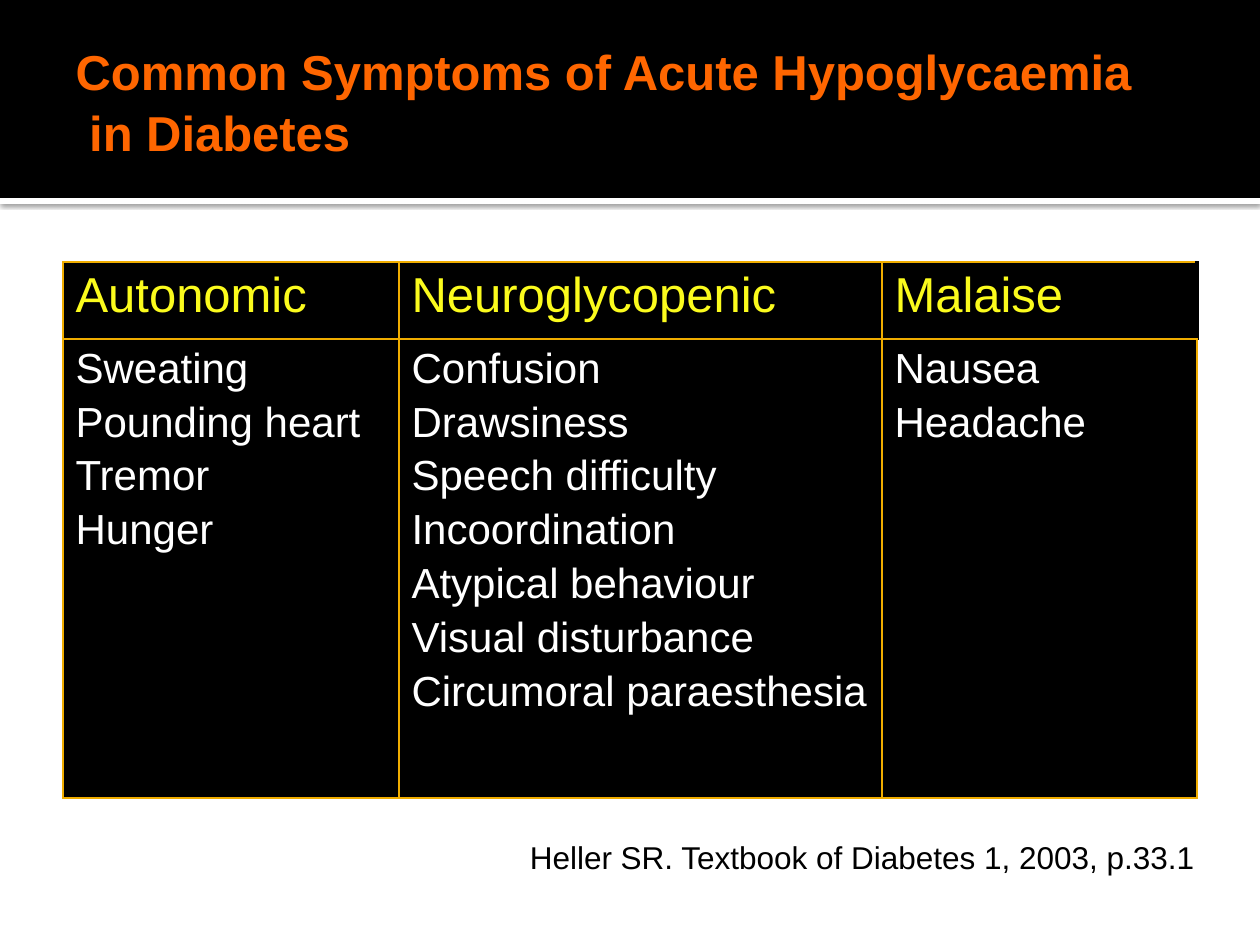
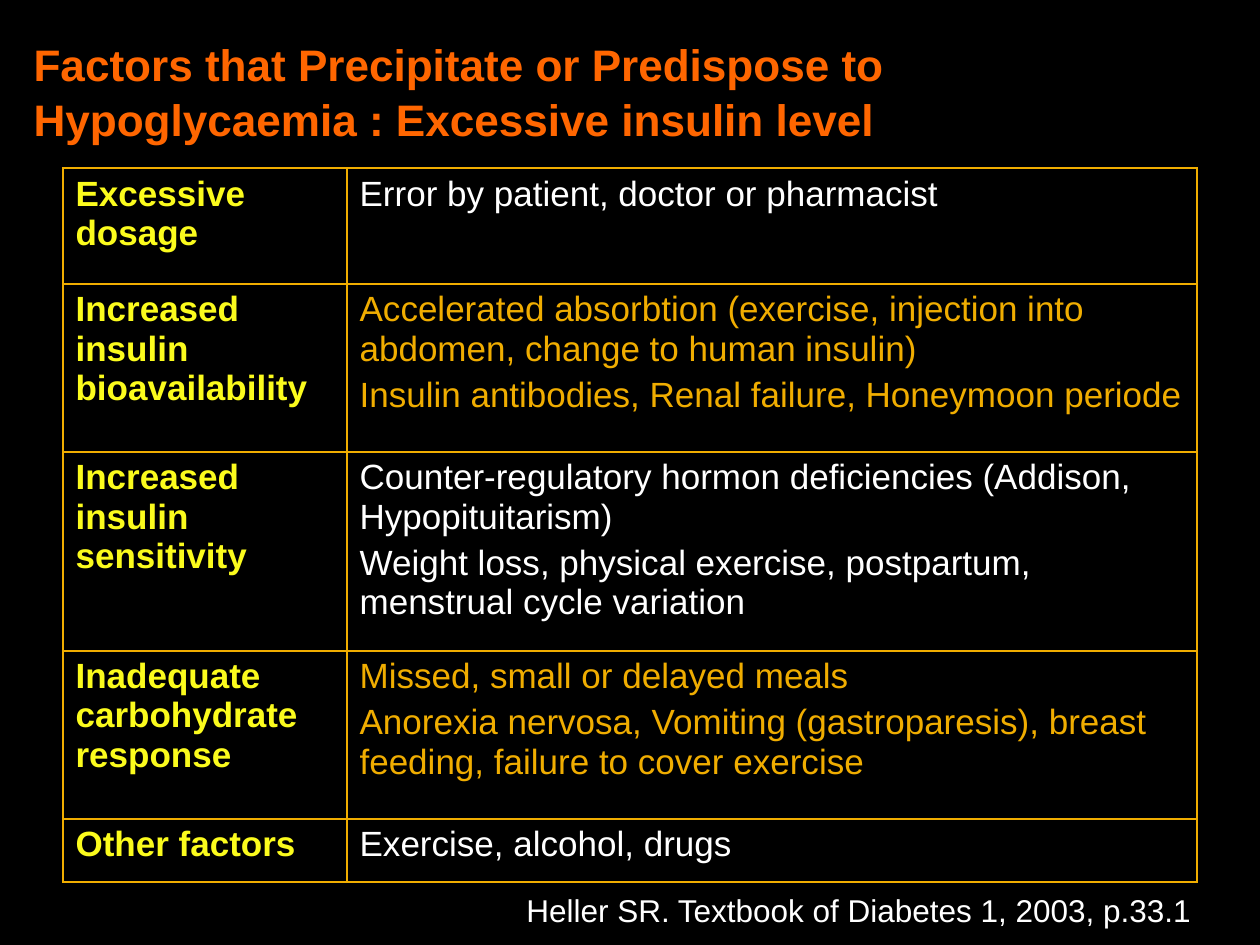
"""Build two slides on the signs and causes of hypoglycaemia."""
from dataclasses import dataclass

from lxml.etree import SubElement as Sub
from pptx import Presentation
from pptx.dml.color import RGBColor as Color
from pptx.enum.shapes import MSO_SHAPE as Kind
from pptx.enum.text import MSO_ANCHOR as Anchor, MSO_AUTO_SIZE as Fit, PP_ALIGN as Align
from pptx.oxml.ns import qn
from pptx.slide import Slide
from pptx.table import _Cell as Cell
from pptx.text.text import TextFrame as Frame
from pptx.util import Emu, Pt

SCALE = 914400 / 126
FONT = "Arial"
BLACK = Color(0x00, 0x00, 0x00)
WHITE = Color(0xFF, 0xFF, 0xFF)
ORANGE = Color(0xFF, 0x66, 0x00)
YELLOW = Color(0xFB, 0xFB, 0x1D)
GOLD = Color(0xF0, 0xAD, 0x00)
SOURCE = "Heller SR. Textbook of Diabetes 1, 2003, p.33.1"


@dataclass(frozen=True)
class Box:
    left: int
    top: int
    width: int
    height: int

    def emu(self) -> tuple[Emu, ...]:
        return tuple(px(n) for n in (self.left, self.top, self.width, self.height))


@dataclass(frozen=True)
class Style:
    size: float
    color: Color
    bold: bool = False
    align: Align = Align.LEFT
    before: float = 0
    line: float = 1


@dataclass(frozen=True)
class Entry:
    text: str
    style: Style


@dataclass(frozen=True)
class Grid:
    top: int
    cols: tuple[int, ...]
    rows: tuple[int, ...]
    cells: list[list[Entry]]


HEAD = Style(28, YELLOW, before=4)
ITEM = Style(24, WHITE, before=4)
LABEL = Style(20, YELLOW, True, before=4)
PLAIN = Style(20, WHITE, before=4)
WARM = Style(20, GOLD, before=4)

SIGNS = {
    "Autonomic": ["Sweating", "Pounding heart", "Tremor", "Hunger"],
    "Neuroglycopenic": [
        "Confusion", "Drawsiness", "Speech difficulty", "Incoordination",
        "Atypical behaviour", "Visual disturbance", "Circumoral paraesthesia",
    ],
    "Malaise": ["Nausea", "Headache"],
}
CAUSES = {
    "Excessive dosage": ["Error by patient, doctor or pharmacist"],
    "Increased insulin bioavailability": [
        "Accelerated absorbtion (exercise, injection into abdomen, change to human insulin)",
        "Insulin antibodies, Renal failure, Honeymoon periode",
    ],
    "Increased insulin sensitivity": [
        "Counter-regulatory hormon deficiencies (Addison, Hypopituitarism)",
        "Weight loss, physical exercise, postpartum, menstrual cycle variation",
    ],
    "Inadequate carbohydrate response": [
        "Missed, small or delayed meals",
        "Anorexia nervosa, Vomiting (gastroparesis), breast feeding, failure to cover exercise",
    ],
    "Other factors": ["Exercise, alcohol, drugs"],
}


def px(count: int) -> Emu:
    return Emu(round(count * SCALE))


def write(frame: Frame, text: str, style: Style) -> None:
    frame.text = text
    for par in frame.paragraphs:
        par.alignment = style.align
        par.space_before = Pt(style.before)
        par.line_spacing = style.line
        for run in par.runs:
            run.font.name = FONT
            run.font.size = Pt(style.size)
            run.font.bold = style.bold
            run.font.color.rgb = style.color


def start(deck: Presentation, back: Color) -> Slide:
    slide = deck.slides.add_slide(deck.slide_layouts[5])
    slide.background.fill.solid()
    slide.background.fill.fore_color.rgb = back
    return slide


def add_title(slide: Slide, box: Box, text: str, size: float) -> None:
    title = slide.shapes.title
    title.left, title.top, title.width, title.height = box.emu()
    frame = title.text_frame
    frame.auto_size = Fit.NONE
    frame.word_wrap = True
    frame.vertical_anchor = Anchor.MIDDLE
    frame.margin_left = Pt(7.2)
    frame.margin_right = frame.margin_top = frame.margin_bottom = Pt(3.6)
    write(frame, text, Style(size, ORANGE, True, line=1.05))
    title.element.getparent().append(title.element)


def add_band(slide: Slide, box: Box, color: Color, shade: bool = False) -> None:
    band = slide.shapes.add_shape(Kind.RECTANGLE, *box.emu())
    band.shadow.inherit = False
    band.fill.solid()
    band.fill.fore_color.rgb = color
    band.line.fill.background()
    if shade:
        glow = band.element.spPr.find(qn("a:effectLst"))
        drop = Sub(glow, qn("a:outerShdw"), blurRad=str(Pt(2.5)),
                   dist=str(Pt(0.8)), dir="5400000", rotWithShape="0")
        tint = Sub(drop, qn("a:srgbClr"), val=str(BLACK))
        Sub(tint, qn("a:alpha"), val="60000")


def edge(cell: Cell, side: str, color: Color, width: float) -> None:
    props = cell._tc.get_or_add_tcPr()
    tag = qn(f"a:ln{side}")
    line = props.find(tag)
    if line is None:
        line = Sub(props, tag)
    for child in list(line):
        line.remove(child)
    line.set("w", str(Pt(width)))
    Sub(Sub(line, qn("a:solidFill")), qn("a:srgbClr"), val=str(color))


def add_grid(slide: Slide, grid: Grid) -> list[list[Cell]]:
    box = Box(63, grid.top, sum(grid.cols), sum(grid.rows))
    table = slide.shapes.add_table(len(grid.rows), len(grid.cols), *box.emu()).table
    table.first_row = table.horz_banding = False
    for col, width in zip(table.columns, grid.cols):
        col.width = px(width)
    for row, height in zip(table.rows, grid.rows):
        row.height = px(height)
    made = [list(row.cells) for row in table.rows]
    for cells, line in zip(made, grid.cells):
        for cell, entry in zip(cells, line):
            for side in "LRTB":
                edge(cell, side, GOLD, 1)
            cell.fill.solid()
            cell.fill.fore_color.rgb = BLACK
            write(cell.text_frame, entry.text, entry.style)
    return made


def add_note(slide: Slide, box: Box, color: Color, align: Align, wrap: bool) -> None:
    frame = slide.shapes.add_textbox(*box.emu()).text_frame
    frame.word_wrap = wrap
    frame.auto_size = Fit.SHAPE_TO_FIT_TEXT
    write(frame, SOURCE, Style(18, color, align=align))


def add_signs(deck: Presentation) -> None:
    slide = start(deck, WHITE)
    add_band(slide, Box(0, 198, 1260, 6), WHITE, shade=True)
    add_band(slide, Box(0, 0, 1260, 198), BLACK)
    add_title(slide, Box(63, 21, 1260, 158),
              "Common Symptoms of Acute Hypoglycaemia\v in Diabetes", 28)
    heads = [Entry(name, HEAD) for name in SIGNS]
    lists = [Entry("\n".join(signs), ITEM) for signs in SIGNS.values()]
    made = add_grid(slide, Grid(262, (336, 483, 315), (77, 459), [heads, lists]))
    edge(made[0][-1], "R", BLACK, 2.25)
    add_note(slide, Box(451, 832, 756, 50), BLACK, Align.RIGHT, True)


def add_causes(deck: Presentation) -> None:
    slide = start(deck, BLACK)
    add_title(slide, Box(21, 32, 1229, 116),
              "Factors that Precipitate or Predispose to\v"
              "Hypoglycaemia : Excessive insulin level", 25.2)
    cells = [
        [Entry(name, LABEL), Entry("\n".join(lines), WARM if i % 2 else PLAIN)]
        for i, (name, lines) in enumerate(CAUSES.items())
    ]
    add_grid(slide, Grid(168, (284, 850), (116, 168, 199, 168, 63), cells))
    add_note(slide, Box(514, 885, 694, 50), WHITE, Align.LEFT, False)


def main() -> None:
    deck = Presentation()
    deck.slide_width, deck.slide_height = px(1260), px(945)
    add_signs(deck)
    add_causes(deck)
    deck.save("out.pptx")


if __name__ == "__main__":
    main()
